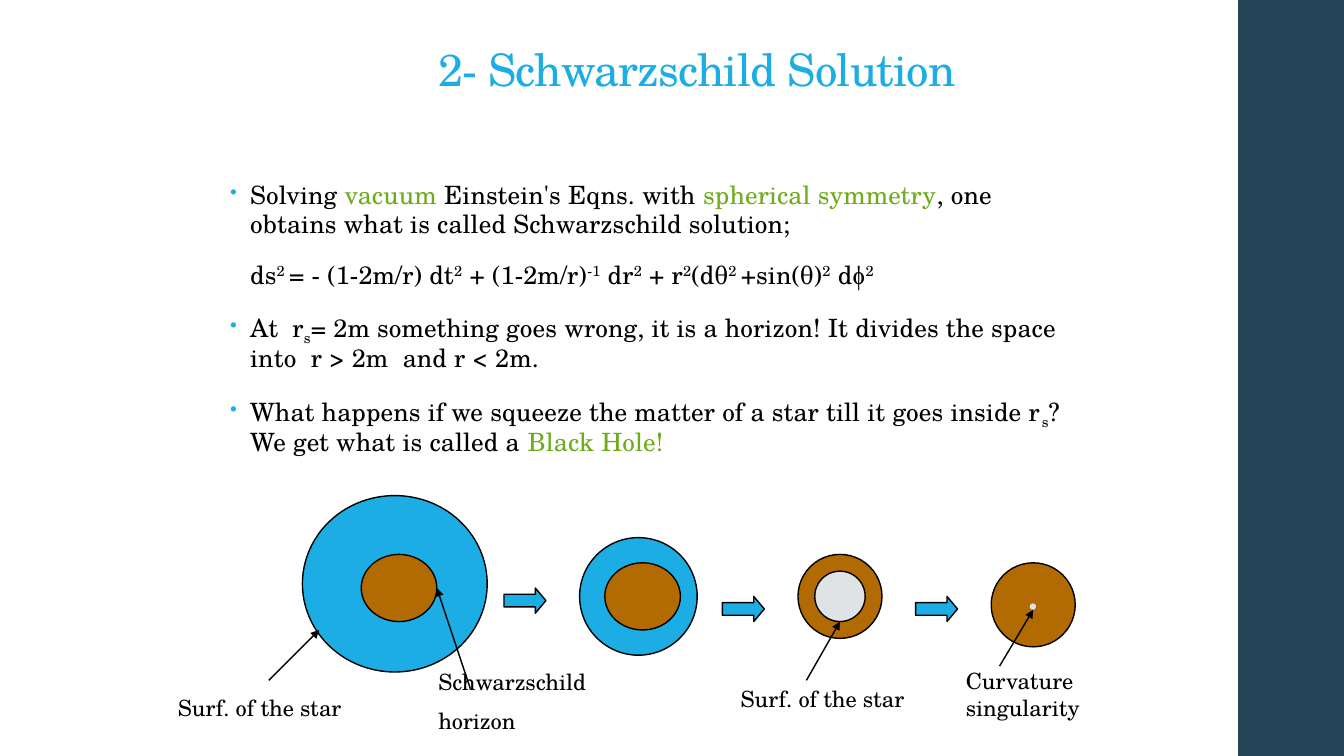
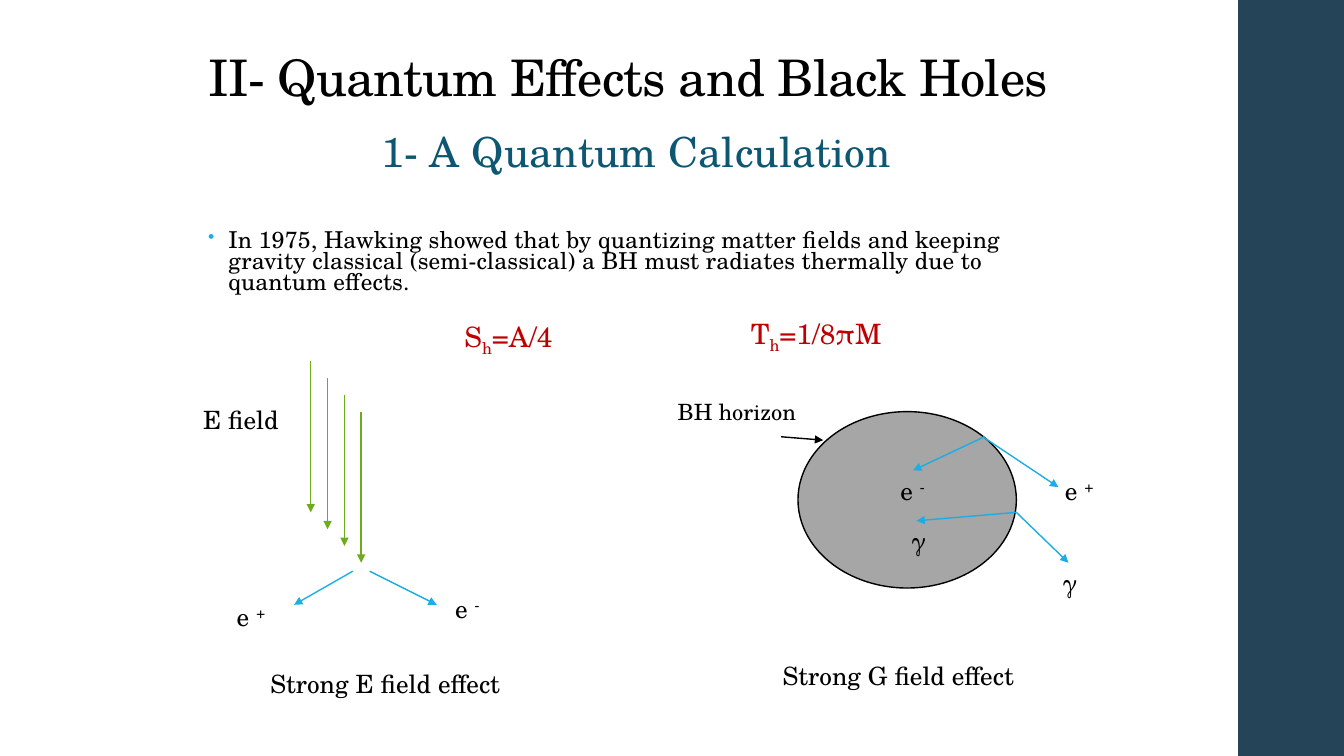
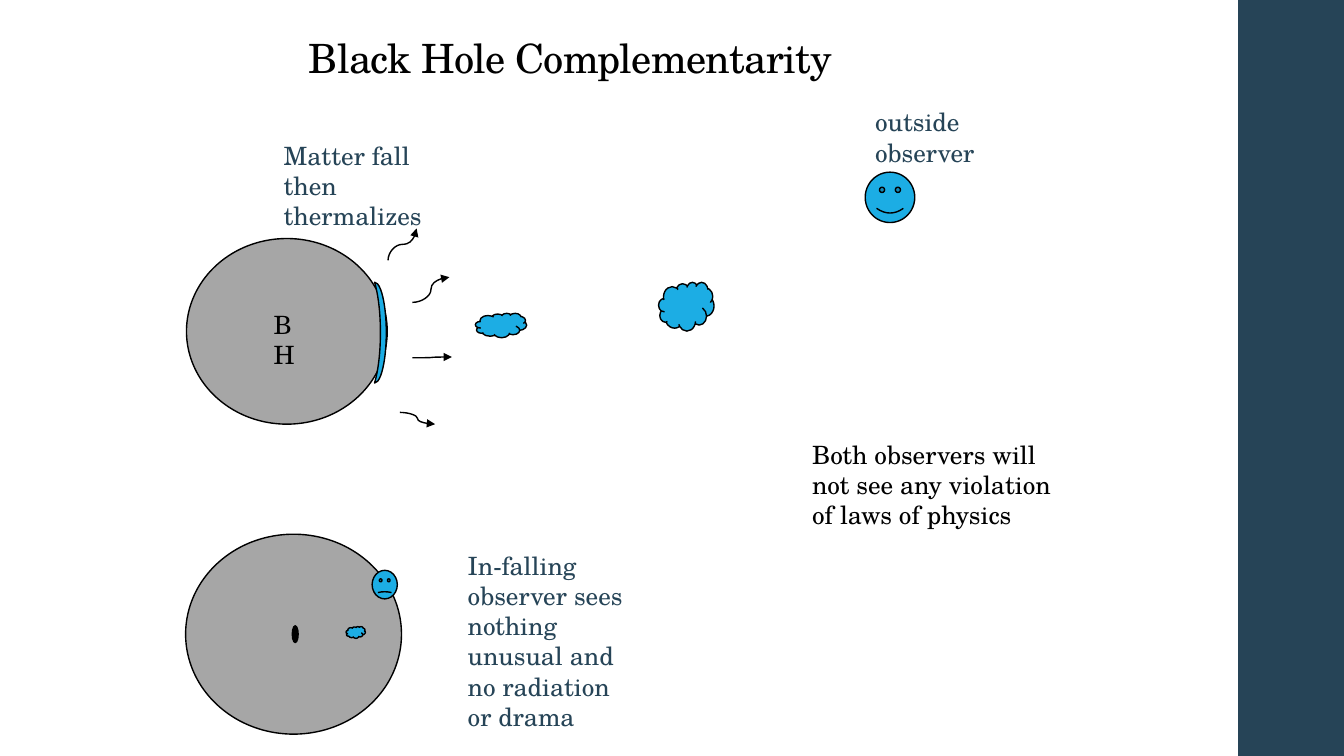
"""Build three slides on black holes, on a grid of 160 columns by 90 rows."""
import pptx
import pptx.dml.color
import pptx.enum.shapes
import pptx.enum.text
import pptx.oxml
import pptx.oxml.ns
import pptx.util

RGBColor = pptx.dml.color.RGBColor
BLACK = RGBColor(0x00, 0x00, 0x00)
NAVY = RGBColor(0x26, 0x44, 0x57)
BLUE = RGBColor(0x1C, 0xAD, 0xE4)
TEAL = RGBColor(0x0E, 0x57, 0x72)
GREEN = RGBColor(0x6E, 0xAC, 0x1C)
BROWN = RGBColor(0xB2, 0x6B, 0x02)
SILVER = RGBColor(0xDF, 0xE3, 0xE5)
GRAY = RGBColor(0xA6, 0xA6, 0xA6)
RED = RGBColor(0xC0, 0x00, 0x00)

FONT = "TeX Gyre Schola"
COLUMNS, ROWS = 160, 90
CELL = pptx.util.Inches(1) / 12
SUP, SUB, KEY = {"baseline": 30}, {"baseline": -25}, {"color": GREEN}
LEFT = pptx.enum.text.PP_ALIGN.LEFT
CENTER = pptx.enum.text.PP_ALIGN.CENTER
TOP = pptx.enum.text.MSO_ANCHOR.TOP
BOTTOM = pptx.enum.text.MSO_ANCHOR.BOTTOM
PRESET = pptx.enum.shapes.MSO_SHAPE
CONNECTOR = pptx.enum.shapes.MSO_CONNECTOR
TITLE = {"align": CENTER, "anchor": BOTTOM, "leading": 0.9, "tracking": -0.5}
BODY = {"before": 14, "after": 2, "tracking": 0.1}


def grid(*cells):
    return [round(cell * CELL) for cell in cells]


def write(slide, box, *paragraphs, size=18, color=BLACK, align=LEFT, anchor=TOP,
          leading=None, before=0, after=0, tracking=0, bullets=()):
    frame = slide.shapes.add_textbox(*grid(*box)).text_frame
    frame.word_wrap = True
    frame.vertical_anchor = anchor
    for index, runs in enumerate(paragraphs):
        paragraph = frame.paragraphs[0] if index == 0 else frame.add_paragraph()
        paragraph.alignment = align
        paragraph.line_spacing = leading
        paragraph.space_before = pptx.util.Pt(before)
        paragraph.space_after = pptx.util.Pt(after)
        if bullets:
            hang = pptx.util.Inches(0.2)
            properties = paragraph._p.get_or_add_pPr()
            properties.set("marL", str(hang))
            properties.set("indent", str(-hang if bullets[index] else 0))
            if bullets[index]:
                namespace = pptx.oxml.ns.nsdecls("a")
                for mark in (f'<a:buClr {namespace}><a:srgbClr val="{BLUE}"/></a:buClr>',
                             f'<a:buSzPct {namespace} val="80000"/>',
                             f'<a:buChar {namespace} char="•"/>'):
                    properties.append(pptx.oxml.parse_xml(mark))
        for part in [runs] if isinstance(runs, str) else runs:
            words, style = (part, {}) if isinstance(part, str) else part
            run = paragraph.add_run()
            run.text = words
            run.font.name = FONT
            run.font.size = pptx.util.Pt(size)
            run.font.color.rgb = style.get("color", color)
            characters = run._r.get_or_add_rPr()
            characters.set("spc", str(round(tracking * 100)))
            characters.set("baseline", str(style.get("baseline", 0) * 1000))


deck = pptx.Presentation()
deck.slide_width, deck.slide_height = grid(COLUMNS, ROWS)
solution, quantum, complementarity = [
    deck.slides.add_slide(deck.slide_layouts[6]) for _ in range(3)]

band = solution.shapes.add_shape(PRESET.RECTANGLE, *grid(147.4, 0, COLUMNS - 147.4, ROWS))
band.shadow.inherit = False
band.fill.solid()
band.fill.fore_color.rgb = NAVY
band.line.fill.background()
deck.slide_master.element.cSld.spTree.append(band.element)

figures = [
    (solution, PRESET.OVAL, (36, 59, 22, 21), BLUE, ()),
    (solution, PRESET.OVAL, (43, 66, 9, 8), BROWN, ()),
    (solution, PRESET.OVAL, (69, 64, 14, 14), BLUE, ()),
    (solution, PRESET.OVAL, (72, 67, 9, 8), BROWN, ()),
    (solution, PRESET.OVAL, (95, 66, 10, 10), BROWN, ()),
    (solution, PRESET.OVAL, (97, 68, 6, 6), SILVER, ()),
    (solution, PRESET.OVAL, (118, 67, 10, 10), BROWN, ()),
    *[(solution, PRESET.RIGHT_ARROW, (column, row, 5, 3), BLUE, (0.5, 0.42))
      for column, row in ((60, 70), (86, 71), (109, 71))],
    (quantum, PRESET.OVAL, (95, 49, 26, 21), GRAY, ()),
    (complementarity, PRESET.OVAL, (22.1, 63.6, 25.7, 23.8), GRAY, ()),
    (complementarity, PRESET.CLOUD, (41.2, 74.6, 2.3, 1.4), BLUE, ()),
    (complementarity, PRESET.SMILEY_FACE, (44.3, 67.9, 3, 3.4), BLUE, (-0.015,)),
    (complementarity, PRESET.OVAL, (34.8, 74.5, 0.7, 2), BLACK, ()),
    (complementarity, PRESET.OVAL, (22.2, 28.4, 23.9, 22.1), GRAY, ()),
    (complementarity, PRESET.CLOUD, (78.4, 33.6, 6.6, 5.8), BLUE, ()),
    (complementarity, PRESET.CLOUD, (56.6, 37.3, 6.1, 2.9), BLUE, ()),
    (complementarity, PRESET.SMILEY_FACE, (103, 20.5, 5.9, 6), BLUE, (0.047,)),
    (complementarity, PRESET.MOON, (44.6, 33.6, 1.4, 12), BLUE, ()),
]
for slide, preset, box, color, adjustments in figures:
    figure = slide.shapes.add_shape(preset, *grid(*box))
    figure.shadow.inherit = False
    figure.fill.solid()
    figure.fill.fore_color.rgb = color
    figure.line.color.rgb = BLACK
    figure.line.width = pptx.util.Pt(1)
    for index, adjustment in enumerate(adjustments):
        figure.adjustments[index] = adjustment
    if preset == PRESET.MOON:
        figure.element.spPr.xfrm.flipH = True

arrows = [
    (solution, CONNECTOR.STRAIGHT, (56, 82, 52, 70), BLACK, 0),
    (solution, CONNECTOR.STRAIGHT, (32, 81, 38, 75), BLACK, 0),
    (solution, CONNECTOR.STRAIGHT, (96, 81, 100, 74), BLACK, 0),
    (solution, CONNECTOR.STRAIGHT, (119, 79.3, 123, 72.6), BLACK, 0),
    (quantum, CONNECTOR.STRAIGHT, (93, 52, 98, 52.4), BLACK, 0),
    *[(quantum, CONNECTOR.STRAIGHT, ends, BLUE, 0) for ends in (
        (117.2, 52, 108.7, 56), (117, 52, 126, 58), (121, 61, 127.2, 67),
        (121, 61, 109.1, 62), (44, 68, 52, 72), (42, 68, 35, 72))],
    *[(quantum, CONNECTOR.STRAIGHT, (37 + step, 43 + step, 37 + step, 61 + step), GREEN, 0)
      for step in range(0, 8, 2)],
    (complementarity, CONNECTOR.CURVE, (49.8, 30.8, 46, 27.4), BLACK, 90),
    (complementarity, CONNECTOR.CURVE, (49.1, 36, 53.5, 33), BLACK, 0),
    (complementarity, CONNECTOR.CURVE, (49.1, 42.6, 53.8, 42.5), BLACK, 0),
    (complementarity, CONNECTOR.CURVE, (47.6, 49.1, 51.8, 50.5), BLACK, 0),
]
for slide, route, ends, color, turn in arrows:
    arrow = slide.shapes.add_connector(route, *grid(*ends))
    arrow.line.color.rgb = color
    arrow.line.width = pptx.util.Pt(1)
    namespace = pptx.oxml.ns.nsdecls("a")
    arrow.line._get_or_add_ln().append(
        pptx.oxml.parse_xml(f'<a:tailEnd {namespace} type="triangle"/>'))
    arrow.element.spPr.append(pptx.oxml.parse_xml(f"<a:effectLst {namespace}/>"))
    arrow.element.spPr.xfrm.rot = turn

write(solution, (29, 4, 108, 8), "2- Schwarzschild Solution", size=32, color=BLUE, **TITLE)
write(solution, (26.2, 21, 104, 37),
      ["Solving ", ("vacuum", KEY), " Einstein's Eqns. with ", ("spherical symmetry", KEY),
       ", one obtains what is called Schwarzschild solution;"],
      ["ds", ("2 ", SUP), "= - (1-2m/r) dt", ("2", SUP), " + (1-2m/r)", ("-1", SUP),
       " dr", ("2", SUP), " + r", ("2", SUP), "(dθ", ("2 ", SUP), "+sin(θ)", ("2", SUP),
       " dϕ", ("2", SUP)],
      ["At  r", ("s", SUB), "= 2m something goes wrong, it is a horizon! "
       "It divides the space into  r > 2m  and r < 2m."],
      ["What happens if we squeeze the matter of a star till it goes inside r", ("s", SUB),
       "? We get what is called a ", ("Black Hole!", KEY)],
      leading=0.95, bullets=(True, False, True, True), **BODY)
write(solution, (51, 79, 25, 9.2), "Schwarzschild", "horizon", size=16, before=8)
for column, row in ((20, 82), (87, 81)):
    write(solution, (column, row, 22, 4.4), "Surf. of the star", size=16)
write(solution, (113.8, 78.8, 22, 7.7), "Curvature singularity", size=16)
write(solution, (121, 66, 3, 8.4), ".", size=36, color=SILVER)

write(quantum, (20.8, 2.4, 108, 11), "II- Quantum Effects and Black Holes", size=36, **TITLE)
write(quantum, (24.8, 15.8, 102, 8), "1- A Quantum Calculation", size=29.6, color=TEAL,
      align=CENTER, leading=0.75, **BODY)
write(quantum, (23.6, 27, 102, 10),
      "In 1975, Hawking showed that by quantizing matter fields and keeping gravity "
      "classical (semi-classical) a BH must radiates thermally due to quantum effects.",
      size=16.6, leading=0.75, bullets=(True,), **BODY)
write(quantum, (54.1, 37.4, 14.5, 5.3), ["S", ("h", SUB), "=A/4"], size=20, color=RED)
write(quantum, (88.2, 37.1, 20.8, 5.3), ["T", ("h", SUB), "=1/8πM"], size=20, color=RED)
write(quantum, (79.5, 46.8, 19, 4.4), "BH horizon", size=16)
write(quantum, (23, 47.5, 13, 4.8), "E field")
for column, row, charge in ((106, 56, "-"), (125.6, 56, "+"), (53, 70, "-"), (27, 71, "+")):
    write(quantum, (column, row, 8, 4.8), ["e ", (charge, SUP)])
for column, row in ((125.3, 67), (107.3, 62)):
    write(quantum, (column, row, 4, 4.8), "γ")
for column, row, field in ((92, 78, "G"), (31, 79, "E")):
    write(quantum, (column, row, 34, 4.8), f"Strong {field} field effect")

write(complementarity, (35.6, 4.4, 92, 6), "Black Hole Complementarity", size=28.8,
      **{**TITLE, "align": LEFT})
write(complementarity, (32.6, 16.1, 24, 12.1), "Matter fall then thermalizes", color=NAVY)
write(complementarity, (103, 12.1, 24, 8.5), "outside observer", color=NAVY)
write(complementarity, (54.5, 64.9, 22.9, 23),
      "In-falling observer sees nothing unusual and no radiation or drama", color=NAVY)
write(complementarity, (31.4, 36.2, 6.8, 8.5), "BH")
write(complementarity, (95.5, 51.7, 30.8, 15.7),
      "Both observers will not see any violation of laws of physics")

deck.save("out.pptx")
